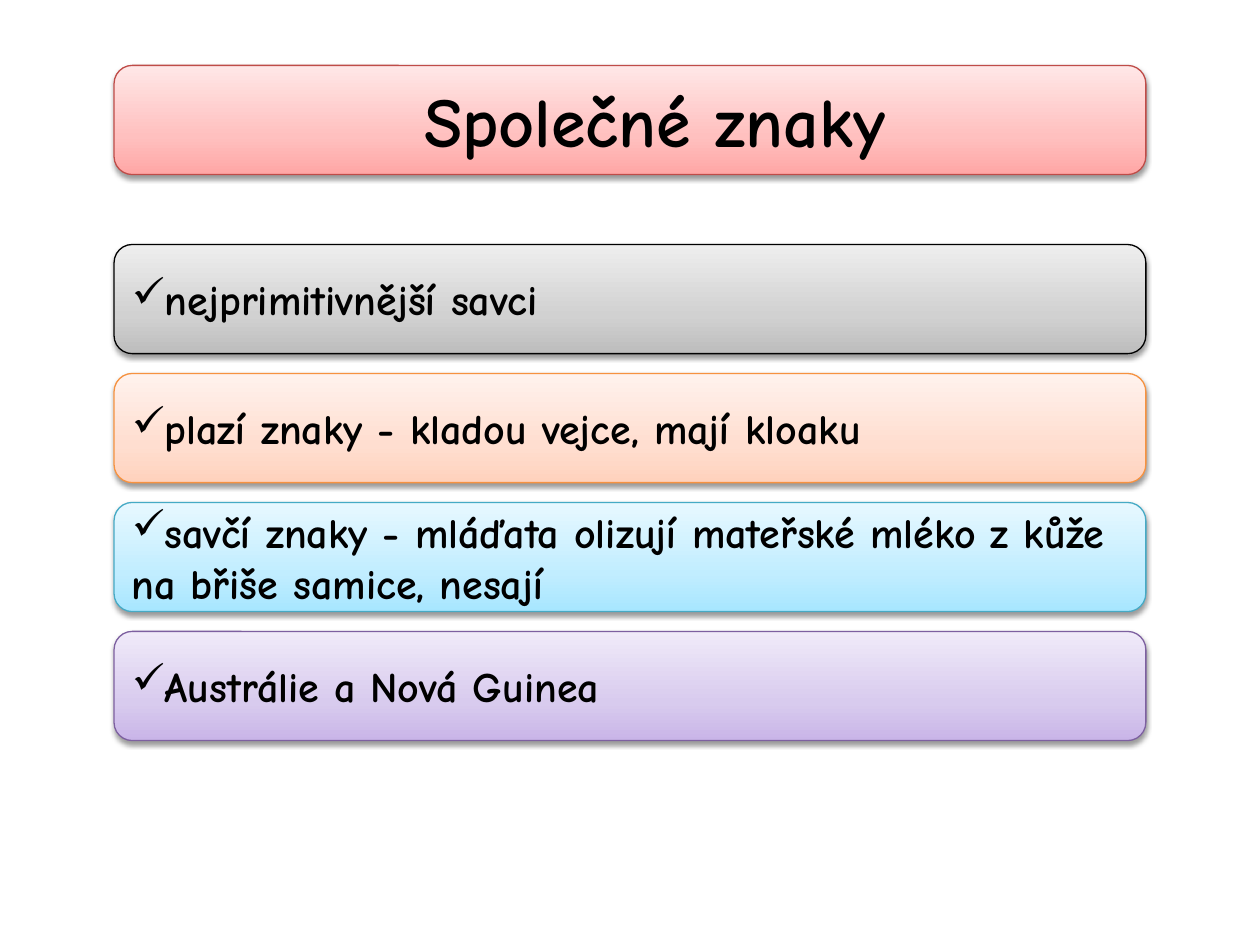
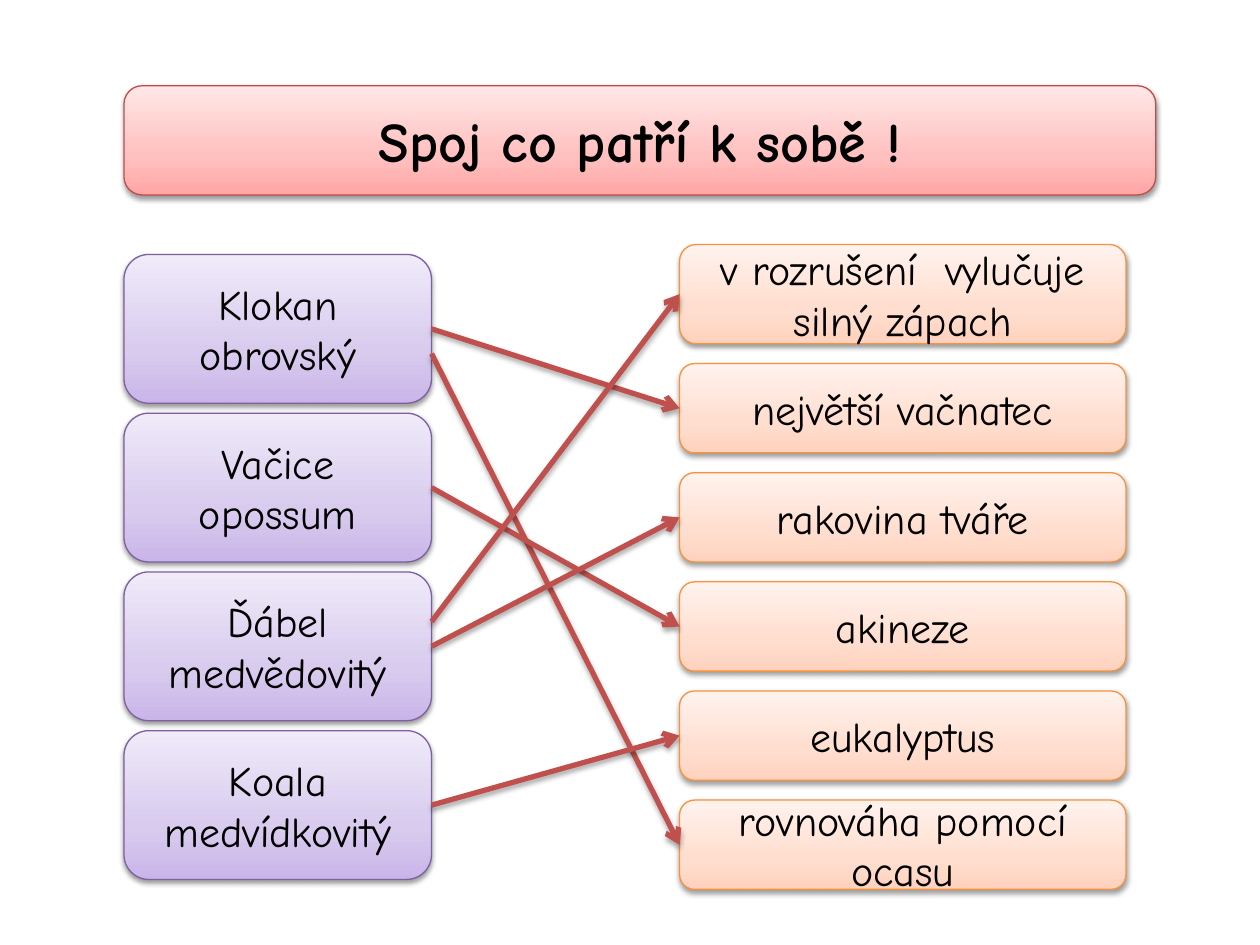
from lxml.etree import SubElement
from pptx import Presentation
from pptx.dml.color import RGBColor
from pptx.enum.shapes import MSO_CONNECTOR as Connector, MSO_SHAPE as Shape
from pptx.enum.text import MSO_ANCHOR as Anchor, PP_ALIGN as Align
from pptx.oxml.ns import qn
from pptx.util import Cm, Pt

FONT = "Comic Neue"
COLORS = {"text": "000000", "shadow": "000000", "arrow": "C0504D"}
THEMES = {
    "red": {"line": "BF4C48", "stops": ("FFA6A5", "FFC0BF", "FFE7E7")},
    "grey": {"line": "000000", "stops": ("BDBDBD", "D1D1D1", "EEEEEE")},
    "orange": {"line": "F69240", "stops": ("FFD2BD", "FFDED0", "FFF2ED")},
    "blue": {"line": "46AAC5", "stops": ("A7E6FF", "C1EDFF", "E7F8FF")},
    "purple": {"line": "7D60A0", "stops": ("C9B5E8", "D8CBEE", "F0EAF9")},
}
STOP_POSITIONS = (0, 35, 100)
BAND_WIDTH, BAND_HEIGHT = 20.8, 2.2
GAP = 0.4
TOP = 4.93

FEATURES = [
    ("nejprimitivnější savci", "grey"),
    ("plazí znaky - kladou vejce, mají kloaku", "orange"),
    ("savčí znaky - mláďata olizují mateřské mléko z kůže na břiše samice, nesají", "blue"),
    ("Austrálie a Nová Guinea", "purple"),
]
ANIMALS = ["Klokan obrovský", "Vačice opossum", "Ďábel medvědovitý", "Koala medvídkovitý"]
CLUES = [
    ("v rozrušení  vylučuje silný zápach", 2.0),
    ("největší vačnatec", 1.8),
    ("rakovina tváře", 1.8),
    ("akineze", 1.8),
    ("eukalyptus", 1.8),
    ("rovnováha pomocí ocasu", 1.8),
]
# animal, clue, vertical offset of the start from the side's middle
MATCHES = [(0, 1, 0), (0, 5, 0.5), (1, 3, 0), (3, 4, 0), (2, 2, 0), (2, 0, -0.5)]


def add_element(parent, tag, **attributes):
    return SubElement(parent, qn(tag), {name: str(value) for name, value in attributes.items()})


def add_gradient(properties, stops):
    gradient = add_element(properties, "a:gradFill", rotWithShape=1)
    stop_list = add_element(gradient, "a:gsLst")
    for position, color in zip(STOP_POSITIONS, stops):
        stop = add_element(stop_list, "a:gs", pos=position * 1000)
        add_element(stop, "a:srgbClr", val=color)
    add_element(gradient, "a:lin", ang=270 * 60000, scaled=0)


def add_shadow(properties, distance, opacity):
    effects = add_element(properties, "a:effectLst")
    shadow = add_element(effects, "a:outerShdw", blurRad=Pt(3.1), dist=Pt(distance),
                         dir=90 * 60000, rotWithShape=0)
    color = add_element(shadow, "a:srgbClr", val=COLORS["shadow"])
    add_element(color, "a:alpha", val=opacity * 1000)


def add_box(page, text, left, top, width, height, theme, size=24, bold=False,
            check=False, extra_inset=0):
    box = page.shapes.add_shape(Shape.ROUNDED_RECTANGLE, Cm(left), Cm(top), Cm(width), Cm(height))
    properties = box._element.spPr
    add_gradient(properties, THEMES[theme]["stops"])
    box.line.color.rgb = RGBColor.from_string(THEMES[theme]["line"])
    box.line.width = Pt(0.75)
    add_shadow(properties, 1.6, 38)
    frame = box.text_frame
    frame.word_wrap = True
    frame.vertical_anchor = Anchor.MIDDLE
    frame.margin_left += Cm(extra_inset)
    para = frame.paragraphs[0]
    para.alignment = Align.LEFT if check else Align.CENTER
    if check:
        add_element(para._p.get_or_add_pPr(), "a:buChar", char="✓")
    span = para.add_run()
    span.text = text
    span.font.name = FONT
    span.font.size = Pt(size)
    span.font.bold = bold
    span.font.color.rgb = RGBColor.from_string(COLORS["text"])
    return box


def add_title(page, text, left, top, **options):
    add_box(page, text, left, top, BAND_WIDTH, BAND_HEIGHT, "red", bold=True, **options)


def add_arrow(page, animal, clue, offset):
    start_y = animal.top + animal.height // 2 + Cm(offset)
    arrow = page.shapes.add_connector(Connector.STRAIGHT, animal.left + animal.width, start_y,
                                      clue.left, clue.top + clue.height // 2)
    if not offset:
        arrow.begin_connect(animal, 3)
    arrow.end_connect(clue, 1)
    arrow.line.color.rgb = RGBColor.from_string(COLORS["arrow"])
    arrow.line.width = Pt(3)
    add_element(arrow.line._get_or_add_ln(), "a:tailEnd", type="arrow")
    add_shadow(arrow._element.spPr, 1.8, 35)


def build_features(page):
    add_title(page, "Společné znaky", 2.3, 1.32, size=40, extra_inset=1)
    for row, (text, theme) in enumerate(FEATURES):
        add_box(page, text, 2.3, TOP + row * (BAND_HEIGHT + GAP), BAND_WIDTH, BAND_HEIGHT,
                theme, bold=True, check=True)


def build_matching(page):
    add_title(page, "Spoj co patří k sobě !", 2.5, 1.73, size=32)
    animals = [add_box(page, text, 2.5, 5.13 + row * 3.2, 6.2, 3, "purple")
               for row, text in enumerate(ANIMALS)]
    clues = []
    top = TOP
    for text, height in CLUES:
        clues.append(add_box(page, text, 13.7, top, 9, height, "orange"))
        top += height + GAP
    for animal, clue, offset in MATCHES:
        add_arrow(page, animals[animal], clues[clue], offset)


def main():
    deck = Presentation()
    deck.slide_width, deck.slide_height = Cm(25.4), Cm(19.05)
    for build in (build_features, build_matching):
        build(deck.slides.add_slide(deck.slide_layouts[6]))
    deck.save("out.pptx")


if __name__ == "__main__":
    main()
